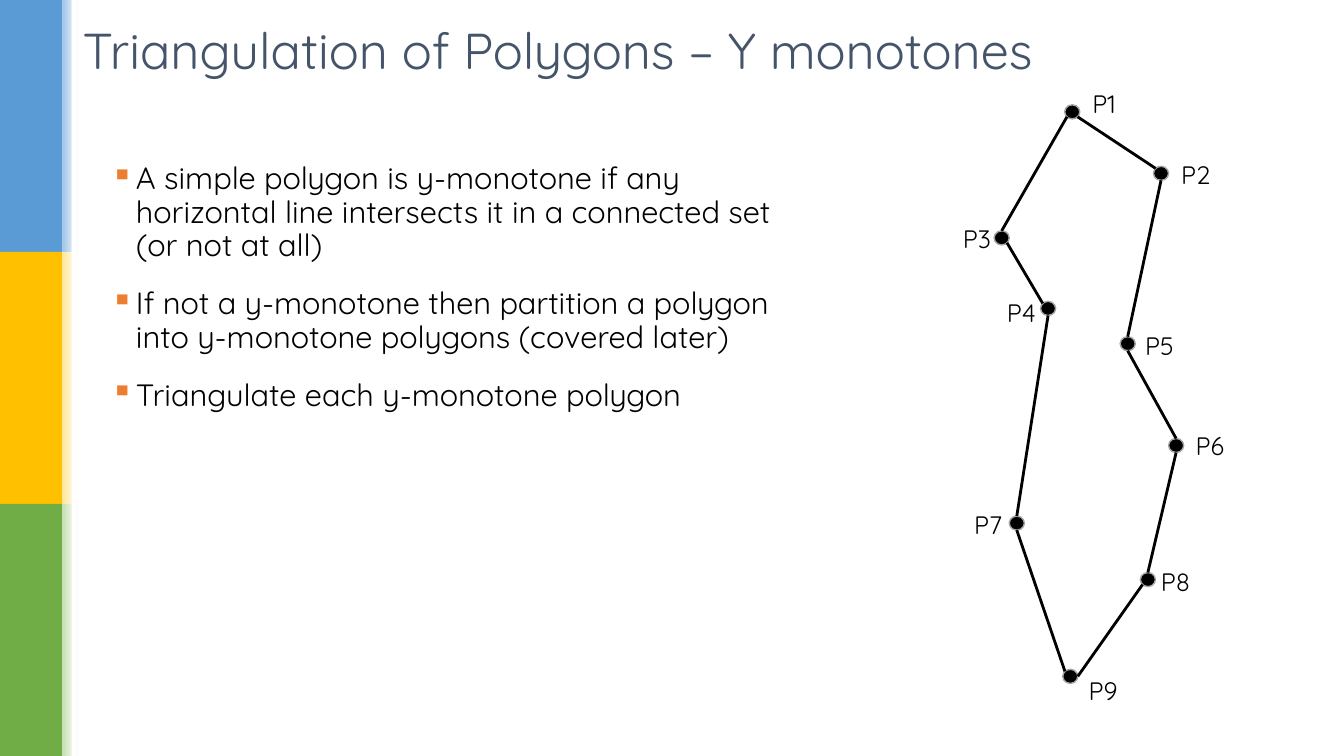
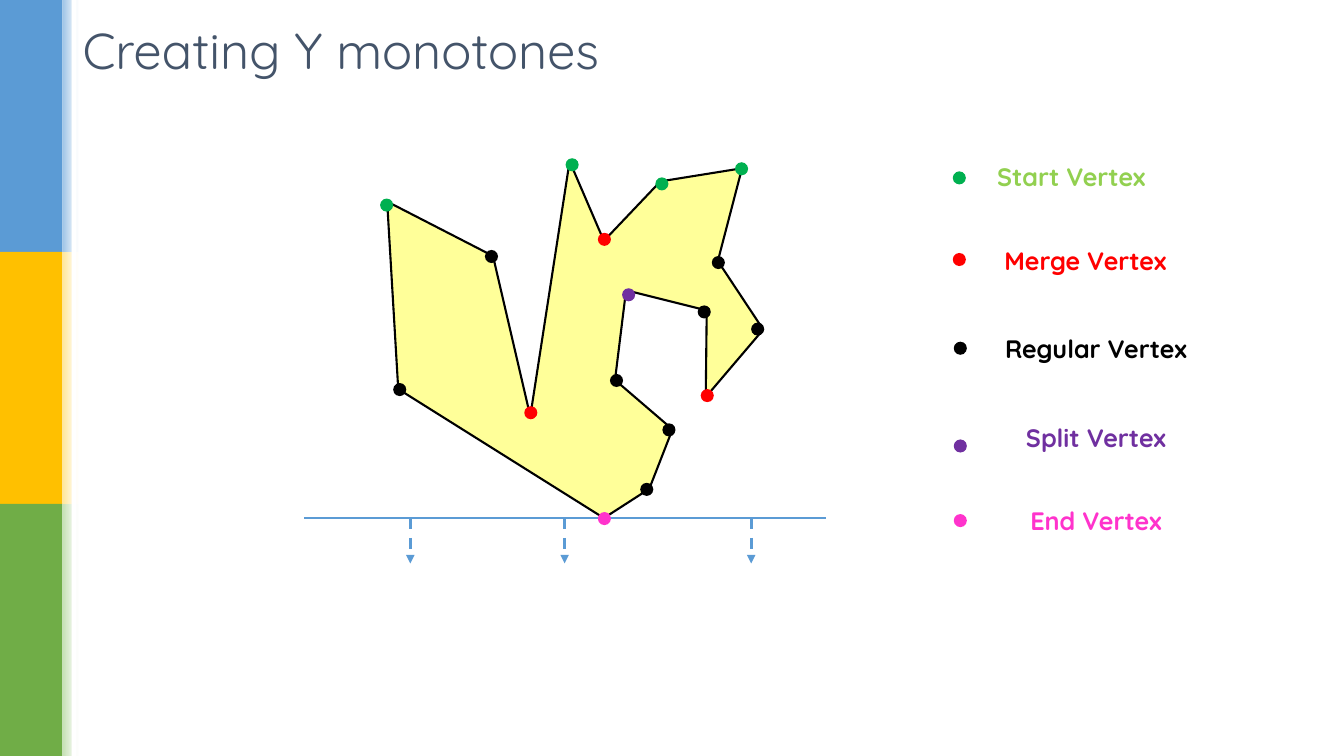
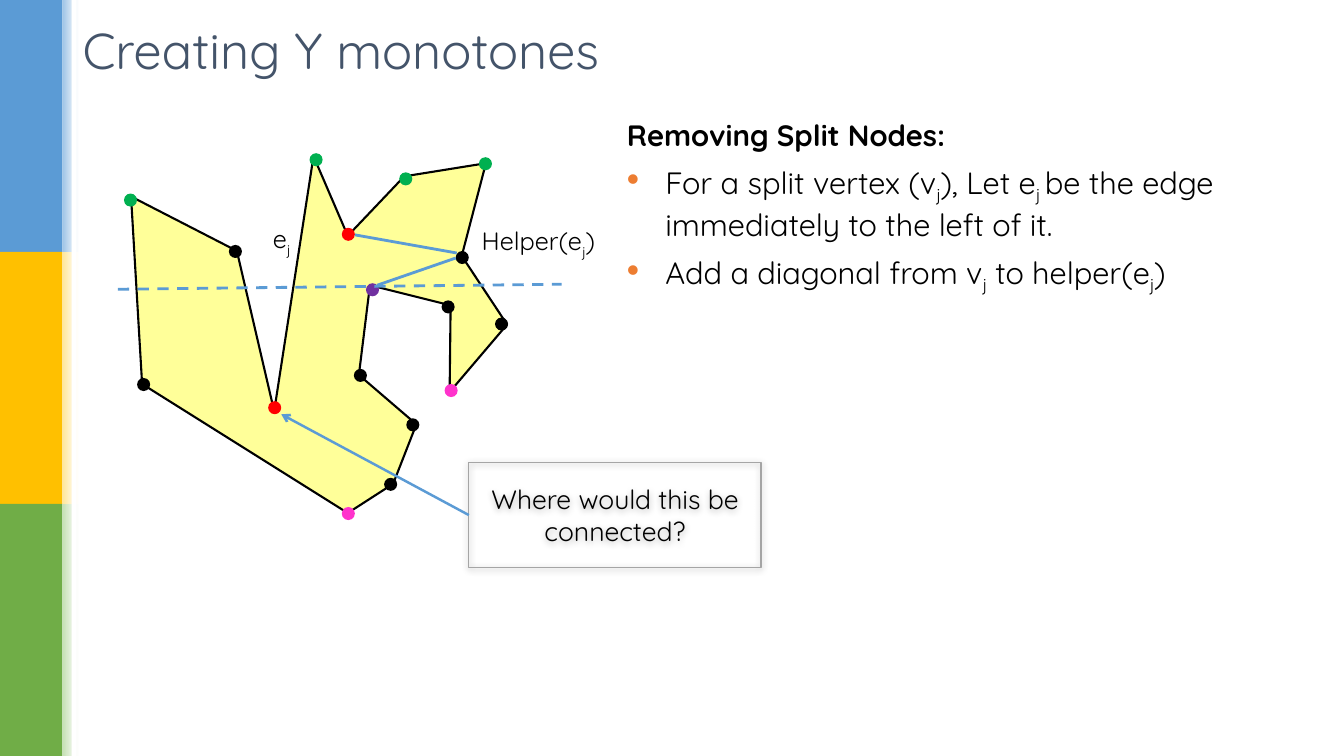
import lxml.etree
import pptx
import pptx.dml.color
import pptx.enum.dml
import pptx.enum.shapes
import pptx.enum.text
import pptx.oxml.ns
import pptx.util

deck = pptx.Presentation()
deck.slide_width = pptx.util.Inches(13.33)
deck.slide_height = pptx.util.Inches(7.5)

# Grid: square cells, 75 rows to the slide's height
cell = deck.slide_height / 75
qn = pptx.oxml.ns.qn
color = pptx.dml.color.RGBColor.from_string
SHAPE = pptx.enum.shapes.MSO_SHAPE

FONT = "Quicksand"
BLACK, WHITE, GREY, SLATE = "000000", "FFFFFF", "A5A5A5", "44546A"
BLUE, ORANGE, YELLOW = "5B9BD5", "ED7D31", "FFFF99"
GREEN, RED, PURPLE, PINK = "00B050", "FF0000", "7030A0", "FF33CC"
BANDS = [(BLUE, "9DC3E6"), ("FFC000", "FFE699"), ("70AD47", "C5E0B4")]
TITLES = [
    "Triangulation of Polygons – Y monotones",
    "Creating Y monotones",
    "Creating Y monotones",
]


def add_text(page, at, lines, size=18, ink=BLACK, bold=False, center=True, middle=True, box=None):
    """Write lines into a box; text between bars is subscript."""
    box = box or page.shapes.add_textbox(*[round(n * cell) for n in at])
    frame = box.text_frame
    frame.word_wrap = True
    if middle:
        frame.vertical_anchor = pptx.enum.text.MSO_ANCHOR.MIDDLE
    if center:
        frame.margin_left = frame.margin_right = 0
    frame.text = "\n".join(lines)
    for para in frame.paragraphs:
        pieces = para.text.split("|")
        para.text = pieces[0]
        for piece in pieces[1:]:
            para.add_run().text = piece
        if center:
            para.alignment = pptx.enum.text.PP_ALIGN.CENTER
        for index, span in enumerate(para.runs):
            span.font.name = FONT
            span.font.size = pptx.util.Pt(size)
            span.font.bold = bold
            span.font.color.rgb = color(ink)
            if index % 2:
                span.font._element.set("baseline", "-25000")
    return frame


def add_line(page, start, end, ink=BLUE, width=2, dashed=False, head=None, tail=None):
    """Draw a straight line between two grid points."""
    line = page.shapes.add_connector(
        pptx.enum.shapes.MSO_CONNECTOR.STRAIGHT, *[round(n * cell) for n in (*start, *end)])
    line.line.color.rgb = color(ink)
    line.line.width = pptx.util.Pt(width)
    if dashed:
        line.line.dash_style = pptx.enum.dml.MSO_LINE.DASH
    outline = line.element.spPr.find(qn("a:ln"))
    for tag, kind in (("a:headEnd", head), ("a:tailEnd", tail)):
        if kind:
            lxml.etree.SubElement(outline, qn(tag)).set("type", kind)
    lxml.etree.SubElement(line.element.spPr, qn("a:effectLst"))
    return line


# Shared side bands and titles
for title in TITLES:
    page = deck.slides.add_slide(deck.slide_layouts[6])
    strips = []
    for row, (strong, soft) in enumerate(BANDS):
        strips.append((0, row * 25, 6.2, 25, strong, None))
        strips.append((6.2, row * 25, 1.6, 25, soft, WHITE))
    strips.append((7.1, 0, 0.5, 75, WHITE, None))
    for *at, first, last in strips:
        strip = page.shapes.add_shape(SHAPE.RECTANGLE, *[round(n * cell) for n in at])
        strip.shadow.inherit = False
        strip.line.fill.background()
        if last:
            strip.fill.gradient()
            strip.fill.gradient_angle = 0
            for stop, shade in zip(strip.fill.gradient_stops, (first, last)):
                stop.color.rgb = color(shade)
        else:
            strip.fill.solid()
            strip.fill.fore_color.rgb = color(first)
    add_text(page, (7.2, 1, 110.2, 7.7), [title], 36, SLATE, center=False)

monotone_page, vertex_page, split_page = deck.slides

# Yellow polygon, at two places
outline_points = [
    (52.6, 41.3), (56.5, 16), (59.9, 23.9), (65.5, 18), (73.6, 16.7), (71.2, 25.9),
    (75.7, 32.7), (70, 39.4), (70.1, 30.8), (62.1, 28.8), (61, 37.7), (66.7, 42.6),
    (64.4, 48.5), (59.9, 51.4), (39.5, 38.6), (38.4, 20), (48.9, 25.4),
]
figures = [(vertex_page, 0, 0, RED), (split_page, -25.4, -0.5, PINK)]
for page, across, down, _ in figures:
    points = [((x + across) * cell, (y + down) * cell) for x, y in outline_points]
    builder = page.shapes.build_freeform(*points[0])
    builder.add_line_segments(points[1:], close=True)
    polygon = builder.convert_to_shape()
    polygon.shadow.inherit = False
    polygon.fill.solid()
    polygon.fill.fore_color.rgb = color(YELLOW)
    polygon.line.color.rgb = color(BLACK)
    polygon.line.width = pptx.util.Pt(1.5)

# Sweep line with its downward arrows
add_line(vertex_page, (30.2, 51.4), (81.9, 51.4))
for x in (74.5, 56, 40.7):
    add_line(vertex_page, (x, 51.4), (x, 55.9), dashed=True, tail="triangle")

# Dots: monotone vertices, polygon vertices, legend keys
vertices = {
    "P1": (105.6, 10.4), "P2": (114.4, 16.5), "P3": (98.6, 22.9),
    "P4": (103.2, 29.9), "P5": (111.1, 33.4), "P6": (115.9, 43.5),
    "P7": (100.1, 51.2), "P8": (113.1, 56.8), "P9": (105.4, 66.4),
}
corners = [
    (37.7, 19.7, GREEN), (56.1, 15.7, GREEN), (65, 17.6, GREEN), (72.9, 16.1, GREEN),
    (59.3, 23.1, RED), (48.1, 24.8, BLACK), (70.6, 25.4, BLACK), (61.7, 28.6, PURPLE),
    (69.2, 30.3, BLACK), (74.5, 32, BLACK), (60.5, 37.1, BLACK), (52, 40.3, RED),
    (39, 38, BLACK), (65.7, 42, BLACK), (63.5, 47.9, BLACK), (59.3, 50.8, PINK),
]
legend = [
    ("Start Vertex", "92D050", 14.5, 16.9, GREEN, 94.5, 17),
    ("Merge Vertex", RED, 22.9, 19.7, RED, 94.5, 25.1),
    ("Regular Vertex", BLACK, 31.6, 21.8, BLACK, 94.6, 33.9),
    ("Split Vertex", PURPLE, 40.4, 21.8, PURPLE, 94.6, 43.6),
    ("End Vertex", PINK, 48.7, 21.8, PINK, 94.6, 51),
]
dots = [(monotone_page, x, y, 1.5, 1.4, BLACK, GREY) for x, y in vertices.values()]
for page, across, down, tip in figures:
    dots += [(page, x + across, y + down, 1.3, 1.3, fill, None)
             for x, y, fill in corners + [(69.5, 38.6, tip)]]
dots += [(vertex_page, x, y, 1.3, 1.3, fill, None) for *_, fill, x, y in legend]
for page, *at, fill, edge in dots:
    dot = page.shapes.add_shape(SHAPE.OVAL, *[round(n * cell) for n in at])
    dot.shadow.inherit = False
    dot.fill.solid()
    dot.fill.fore_color.rgb = color(fill)
    if edge:
        dot.line.color.rgb = color(edge)
        dot.line.width = pptx.util.Pt(1)
    else:
        dot.line.fill.background()

# Edges of the monotone polygon, from rim to rim of the dots
rim = {"N": (0.5, 0), "NW": (0.15, 0.15), "S": (0.5, 1), "SW": (0.15, 0.85),
       "SE": (0.85, 0.85), "E": (1, 0.5)}
edges = [
    "P1 SW P3 N", "P3 SE P4 NW", "P4 S P7 N", "P7 S P9 NW", "P1 SE P2 NW",
    "P2 S P5 N", "P5 S P6 N", "P6 S P8 N", "P8 SW P9 E",
]
for edge in edges:
    first, leave, second, arrive = edge.split()
    start, end = [(vertices[name][0] + 1.5 * rim[side][0], vertices[name][1] + 1.4 * rim[side][1])
                  for name, side in ((first, leave), (second, arrive))]
    add_line(monotone_page, start, end, BLACK)

# Vertex names and legend texts
name_places = {
    "P1": (107, 8.5), "P2": (116.1, 15.5), "P3": (94.4, 21.9),
    "P4": (98.8, 29.2), "P5": (112.5, 32.5), "P6": (117.5, 42.4),
    "P7": (95.5, 50.2), "P8": (114.1, 55.9), "P9": (106.9, 66.7),
}
for name, place in name_places.items():
    add_text(monotone_page, (*place, 5, 3.6), [name])
for label, ink, top, width, *_ in legend:
    add_text(vertex_page, (97.8, top, width, 5.9), [label], ink=ink, bold=True)

# Body texts with bullets
monotone_body = add_text(monotone_page, (10, 15.7, 72.2, 43.9), [
    "A simple polygon is y-monotone if any horizontal line intersects it in a connected set (or not at all)",
    "If not a y-monotone then partition a polygon into y-monotone polygons (covered later)",
    "Triangulate each y-monotone polygon",
], 22, center=False, middle=False)
split_body = add_text(split_page, (61.2, 11.1, 68.7, 17.9), [
    "Removing Split Nodes:",
    "For a split vertex (v|j|), Let e|j |be the edge immediately to the left of it.",
    "Add a diagonal from v|j| to helper(e|j|)",
], 22, center=False, middle=False)
heading = split_body.paragraphs[0].runs[0]
heading.font.size = pptx.util.Pt(21)
heading.font.bold = True

bodies = [
    (monotone_body, 0, "▪", 2.5, 100, 0.9, 6, 12),
    (split_body, 1, "•", 3.8, 119, 1.0, 4, 4),
]
for frame, first_bullet, mark, indent, percent, spacing, before, after in bodies:
    for index, para in enumerate(frame.paragraphs):
        para.line_spacing = spacing
        para.space_after = pptx.util.Pt(after)
        if index:
            para.space_before = pptx.util.Pt(before)
        if index >= first_bullet:
            settings = para._p.get_or_add_pPr()
            settings.set("marL", str(round(indent * cell)))
            settings.set("indent", str(-round(indent * cell)))
            tint = lxml.etree.SubElement(settings, qn("a:buClr"))
            lxml.etree.SubElement(tint, qn("a:srgbClr")).set("val", ORANGE)
            lxml.etree.SubElement(settings, qn("a:buSzPct")).set("val", str(percent * 1000))
            lxml.etree.SubElement(settings, qn("a:buChar")).set("char", mark)

# Split vertex: sweep line, edge names and diagonals to the helper
add_line(split_page, (11.7, 28.7), (55.7, 28.2), dashed=True)
add_text(split_page, (23.3, 22.1, 9.3, 3.6), ["e|j"])
add_text(split_page, (46.1, 22.3, 14.6, 3.6), ["Helper(e|j|)"])
add_line(split_page, (35.2, 23.3), (45.3, 25.1))
add_line(split_page, (37.4, 28.3), (45.2, 25.6))

# Question box with a soft shadow, and its arrow
question = split_page.shapes.add_shape(
    SHAPE.RECTANGLE, *[round(n * cell) for n in (46.5, 45.9, 29, 10.4)])
question.fill.background()
question.line.color.rgb = color(GREY)
question.line.width = pptx.util.Pt(1)
question.shadow.inherit = False
shadow = lxml.etree.SubElement(
    question.element.spPr.find(qn("a:effectLst")), qn("a:outerShdw"),
    blurRad=str(pptx.util.Pt(5)), dist=str(pptx.util.Pt(1)), dir="5400000", rotWithShape="0")
shade = lxml.etree.SubElement(shadow, qn("a:srgbClr"), val=BLACK)
lxml.etree.SubElement(shade, qn("a:alpha"), val="32000")
add_text(split_page, None, ["Where would this be connected?"], 19, box=question)
pointer = add_line(split_page, (27.9, 41.1), (46.5, 51.1), width=1.75, head="arrow")
pointer.end_connect(question, 1)

deck.save("out.pptx")
